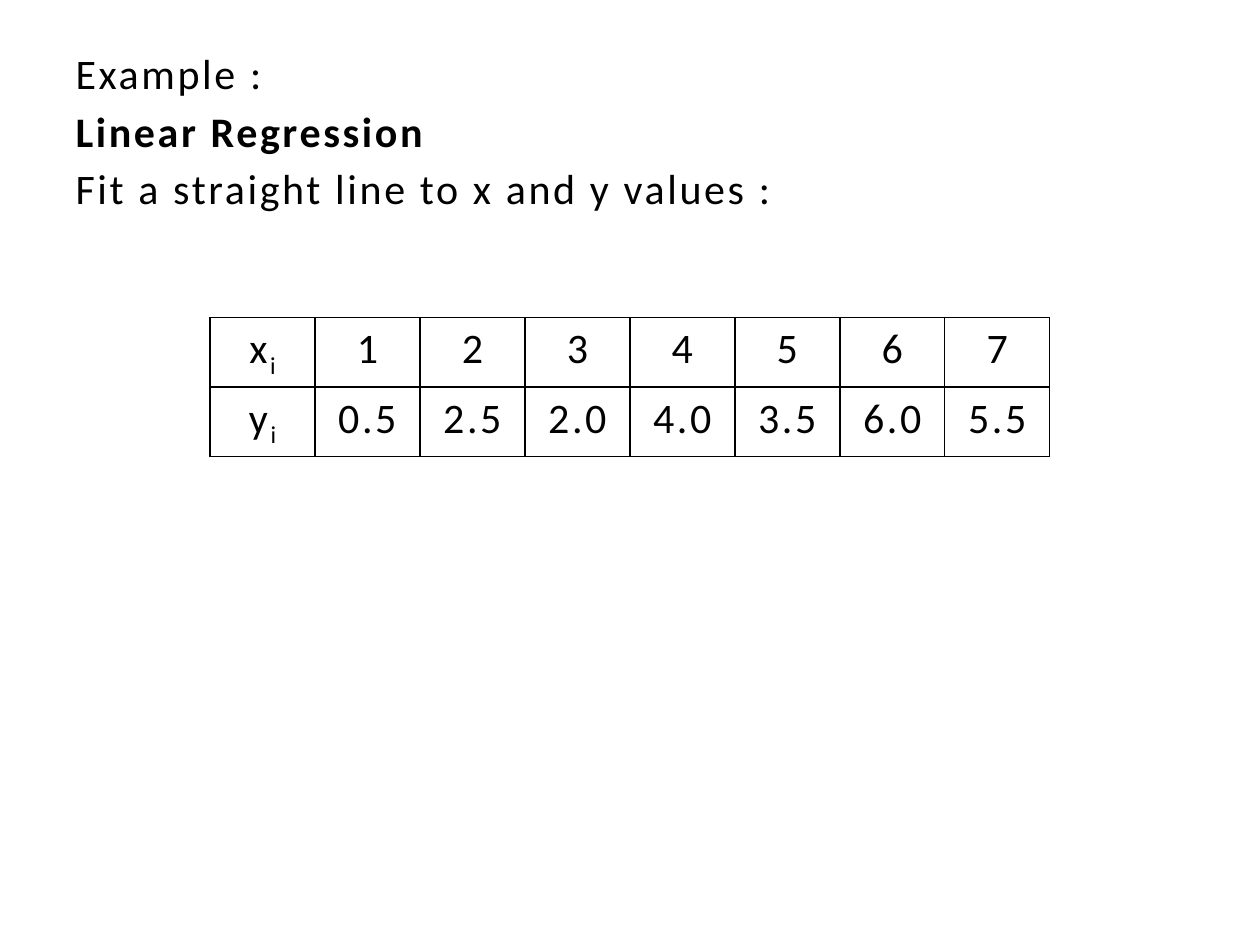
from lxml.etree import SubElement
from pptx import Presentation
from pptx.dml.color import RGBColor
from pptx.enum.text import MSO_ANCHOR, MSO_AUTO_SIZE, PP_ALIGN
from pptx.oxml.ns import qn
from pptx.util import Inches, Pt


def add_text(paragraph, text, size=24, color="000000", bold=False, baseline=0):
    run = paragraph.add_run()
    run.text = text
    font = run.font
    font.name, font.size, font.bold = "Calibri", Pt(size), bold
    font.color.rgb = RGBColor.from_string(color)
    properties = run._r.get_or_add_rPr()
    properties.set("spc", "150")
    if baseline:
        properties.set("baseline", str(baseline * 1000))


def add_borders(cell, color="000000", width=1):
    properties = cell._tc.get_or_add_tcPr()
    for position, side in enumerate(("lnL", "lnR", "lnT", "lnB")):
        line = properties.makeelement(qn(f"a:{side}"), {"w": str(Pt(width))})
        fill = SubElement(line, qn("a:solidFill"))
        SubElement(fill, qn("a:srgbClr"), val=color)
        properties.insert(position, line)


presentation = Presentation()
presentation.slide_width, presentation.slide_height = Inches(10), Inches(7.5)
slide = presentation.slides.add_slide(presentation.slide_layouts[1])
title = slide.shapes.title
title.element.getparent().remove(title.element)

# Introduction
body = slide.placeholders[1]
body.left, body.top = Inches(0.5), Inches(0.33)
body.width, body.height = Inches(8.83), Inches(6.37)
frame = body.text_frame
frame.word_wrap = True
frame.auto_size = MSO_AUTO_SIZE.NONE
frame.vertical_anchor = MSO_ANCHOR.TOP
introduction = [
    ("Example :", False),
    ("Linear Regression", True),
    ("Fit a straight line to x and y values :", False),
]
for index, (text, bold) in enumerate(introduction):
    paragraph = frame.add_paragraph() if index else frame.paragraphs[0]
    paragraph.space_before = Pt(4 if index else 0)
    properties = paragraph._p.get_or_add_pPr()
    properties.set("marL", "0")
    properties.set("indent", "0")
    SubElement(properties, qn("a:buNone"))
    add_text(paragraph, text, bold=bold)

# Table of x and y values, centred across the slide
data = {
    "x": ["1", "2", "3", "4", "5", "6", "7"],
    "y": ["0.5", "2.5", "2.0", "4.0", "3.5", "6.0", "5.5"],
}
row_count, column_count = len(data), len(data["x"]) + 1
column_width, row_height = presentation.slide_width // 12, Inches(0.55)
table_width = column_count * column_width
table = slide.shapes.add_table(
    row_count, column_count, (presentation.slide_width - table_width) // 2,
    Inches(2.52), table_width, row_count * row_height,
).table
table.first_row = table.horz_banding = False
for row, (variable, values) in enumerate(data.items()):
    for column, text in enumerate([variable, *values]):
        cell = table.cell(row, column)
        cell.fill.background()
        add_borders(cell)
        paragraph = cell.text_frame.paragraphs[0]
        paragraph.alignment = PP_ALIGN.CENTER
        add_text(paragraph, text)
        if column == 0:
            add_text(paragraph, "i", baseline=-25)

presentation.save("out.pptx")
